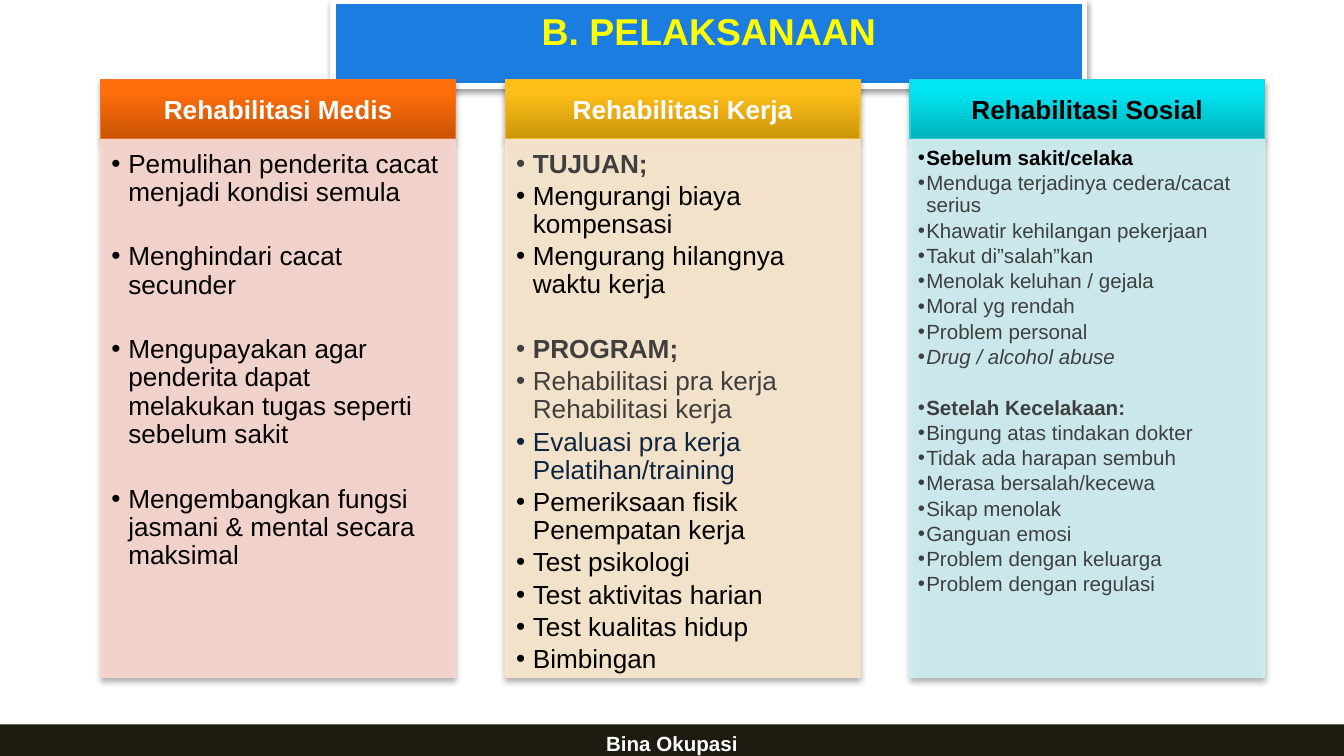
from pptx import Presentation
from pptx.dml.color import RGBColor
from pptx.enum.shapes import MSO_SHAPE
from pptx.enum.text import MSO_ANCHOR, PP_ALIGN
from pptx.oxml import parse_xml
from pptx.oxml.ns import nsdecls
from pptx.util import Inches, Pt

BLACK, GREY, NAVY, WHITE = "000000", "3F3F3F", "0F243E", "FFFFFF"
LEFT, COLUMN_WIDTH, COLUMN_STEP = 0.75, 2.64, 3.01
HEADER_TOP, HEADER_HEIGHT, BODY_TOP, BODY_HEIGHT = 0.59, 0.44, 1.04, 4


def color(hex_string):
    return RGBColor.from_string(hex_string)


def add_panel(box, fill, line=None, line_width=0.75, alpha=100, shadow=35):
    """Add a rectangle with a soft shadow below; a pair of fills is a gradient."""
    shape = slide.shapes.add_shape(MSO_SHAPE.RECTANGLE, *map(Inches, box))
    if isinstance(fill, tuple):
        shape.fill.gradient()
        shape.fill.gradient_angle = 90
        for stop, position, shade in zip(shape.fill.gradient_stops, (0, 0.8), fill):
            stop.position = position
            stop.color.rgb = color(shade)
    else:
        shape.fill.solid()
        shape.fill.fore_color.rgb = color(fill)
    if line:
        shape.line.color.rgb = color(line)
        shape.line.width = Pt(line_width)
    else:
        shape.line.fill.background()
    properties = shape.fill._xPr
    if alpha < 100:
        for tone in properties.xpath(".//a:srgbClr"):
            tone.append(parse_xml(f'<a:alpha {nsdecls("a")} val="{alpha * 1000}"/>'))
    shape.shadow.inherit = False
    properties.xpath("a:effectLst")[0].append(parse_xml(
        f'<a:outerShdw {nsdecls("a")} blurRad="{Pt(3.1)}" dist="{Pt(1.8)}" dir="5400000" '
        f'rotWithShape="0"><a:srgbClr val="000000"><a:alpha val="{shadow * 1000}"/>'
        '</a:srgbClr></a:outerShdw>'))
    shape.text_frame.vertical_anchor = MSO_ANCHOR.TOP
    return shape


# Each item: text, colour, style (b bold, i italic, + gap after)
medical = [
    ("Pemulihan penderita cacat menjadi kondisi semula", BLACK, "+"),
    ("Menghindari cacat secunder", BLACK, "+"),
    ("Mengupayakan agar penderita dapat melakukan tugas seperti sebelum sakit", BLACK, "+"),
    ("Mengembangkan fungsi jasmani & mental secara maksimal", BLACK, ""),
]
work = [
    ("TUJUAN;", GREY, "b"),
    ("Mengurangi biaya kompensasi", BLACK, ""),
    ("Mengurang hilangnya waktu kerja", BLACK, "+"),
    ("PROGRAM;", GREY, "b"),
    ("Rehabilitasi pra kerja Rehabilitasi kerja", GREY, ""),
    ("Evaluasi pra kerja Pelatihan/training", NAVY, ""),
    ("Pemeriksaan fisik Penempatan kerja", BLACK, ""),
    ("Test psikologi", BLACK, ""),
    ("Test aktivitas harian", BLACK, ""),
    ("Test kualitas hidup", BLACK, ""),
    ("Bimbingan", BLACK, ""),
]
social = [
    ("Sebelum sakit/celaka", BLACK, "b"),
    ("Menduga terjadinya cedera/cacat serius", GREY, ""),
    ("Khawatir kehilangan pekerjaan", GREY, ""),
    ("Takut di”salah”kan", GREY, ""),
    ("Menolak keluhan / gejala", GREY, ""),
    ("Moral yg rendah", GREY, ""),
    ("Problem personal", GREY, ""),
    ("Drug / alcohol abuse", GREY, "i+"),
    ("Setelah Kecelakaan:", GREY, "b"),
    ("Bingung atas tindakan dokter", GREY, ""),
    ("Tidak ada harapan sembuh", GREY, ""),
    ("Merasa bersalah/kecewa", GREY, ""),
    ("Sikap menolak", GREY, ""),
    ("Ganguan emosi", GREY, ""),
    ("Problem dengan keluarga", GREY, ""),
    ("Problem dengan regulasi", GREY, ""),
]
wide, narrow = (0.08, 0.08, 0.11, 0.12), (0.06, 0.06, 0.09, 0.1)
# Heading, its colour, gradient, header line, body fill, size, indent, insets, items
columns = [
    ("Rehabilitasi Medis", WHITE, ("CA5404", "FF6E0C"), "F07624", "F9D6CD",
     14, Pt(9), wide, medical),
    ("Rehabilitasi Kerja", WHITE, ("CC970B", "FFBF19"), "F4BD2D", "FBE8CD",
     14, Pt(9), wide, work),
    ("Rehabilitasi Sosial", BLACK, ("01B1BB", "01E6F3"), "1ED4DE", "CDEFF2",
     11, Pt(4.5), narrow, social),
]

presentation = Presentation()
presentation.slide_width = Inches(10)
presentation.slide_height = presentation.slide_width * 9 // 16
slide = presentation.slides.add_slide(presentation.slide_layouts[6])

title = add_panel((2.48, 0.01, 5.59, 0.63), "1C7DE1", WHITE, 3, shadow=38)
labels = [(title, "B. PELAKSANAAN", 20, "FFFF00")]

for index, (heading, heading_color, gradient, line, body_fill,
            size, indent, insets, items) in enumerate(columns):
    left = LEFT + index * COLUMN_STEP
    header_box = (left, HEADER_TOP, COLUMN_WIDTH, HEADER_HEIGHT)
    body_box = (left, BODY_TOP, COLUMN_WIDTH, BODY_HEIGHT)

    add_panel(header_box, gradient, line)
    header = slide.shapes.add_textbox(*map(Inches, header_box))
    header.text_frame.vertical_anchor = MSO_ANCHOR.MIDDLE
    header.text_frame.paragraphs[0].line_spacing = 0.9
    labels.append((header, heading, 14, heading_color))

    add_panel(body_box, body_fill, body_fill, alpha=90)
    body = slide.shapes.add_textbox(*map(Inches, body_box)).text_frame
    body.word_wrap = True
    (body.margin_left, body.margin_top,
     body.margin_right, body.margin_bottom) = map(Inches, insets)
    for number, (text, text_color, style) in enumerate(items):
        paragraph = body.add_paragraph() if number else body.paragraphs[0]
        paragraph.text = text
        properties = paragraph._p.get_or_add_pPr()
        properties.set("marL", str(indent))
        properties.set("indent", str(-indent))
        properties.append(parse_xml(f'<a:buFont {nsdecls("a")} typeface="Arial"/>'))
        properties.append(parse_xml(f'<a:buChar {nsdecls("a")} char="•"/>'))
        paragraph.alignment = PP_ALIGN.LEFT
        paragraph.line_spacing = 0.9
        paragraph.space_after = Pt(size * (1.39 if "+" in style else 0.15))
        paragraph.font.size = Pt(size)
        paragraph._p.append(parse_xml(
            f'<a:endParaRPr {nsdecls("a")} sz="{size * 100}"/>'))
        font = paragraph.runs[0].font
        font.name, font.size = "Arial", Pt(size)
        font.bold, font.italic = "b" in style, "i" in style
        font.color.rgb = color(text_color)

footer = add_panel((-0.02, 5.39, 10.04, 0.29), "1E1C11")
labels.append((footer, "Bina Okupasi", 11, WHITE))

for shape, text, size, text_color in labels:
    shape.text_frame.word_wrap = True
    shape.text_frame.text = text
    paragraph = shape.text_frame.paragraphs[0]
    paragraph.alignment = PP_ALIGN.CENTER
    font = paragraph.runs[0].font
    font.name, font.size, font.bold = "Arial", Pt(size), True
    font.color.rgb = color(text_color)

presentation.save("out.pptx")
